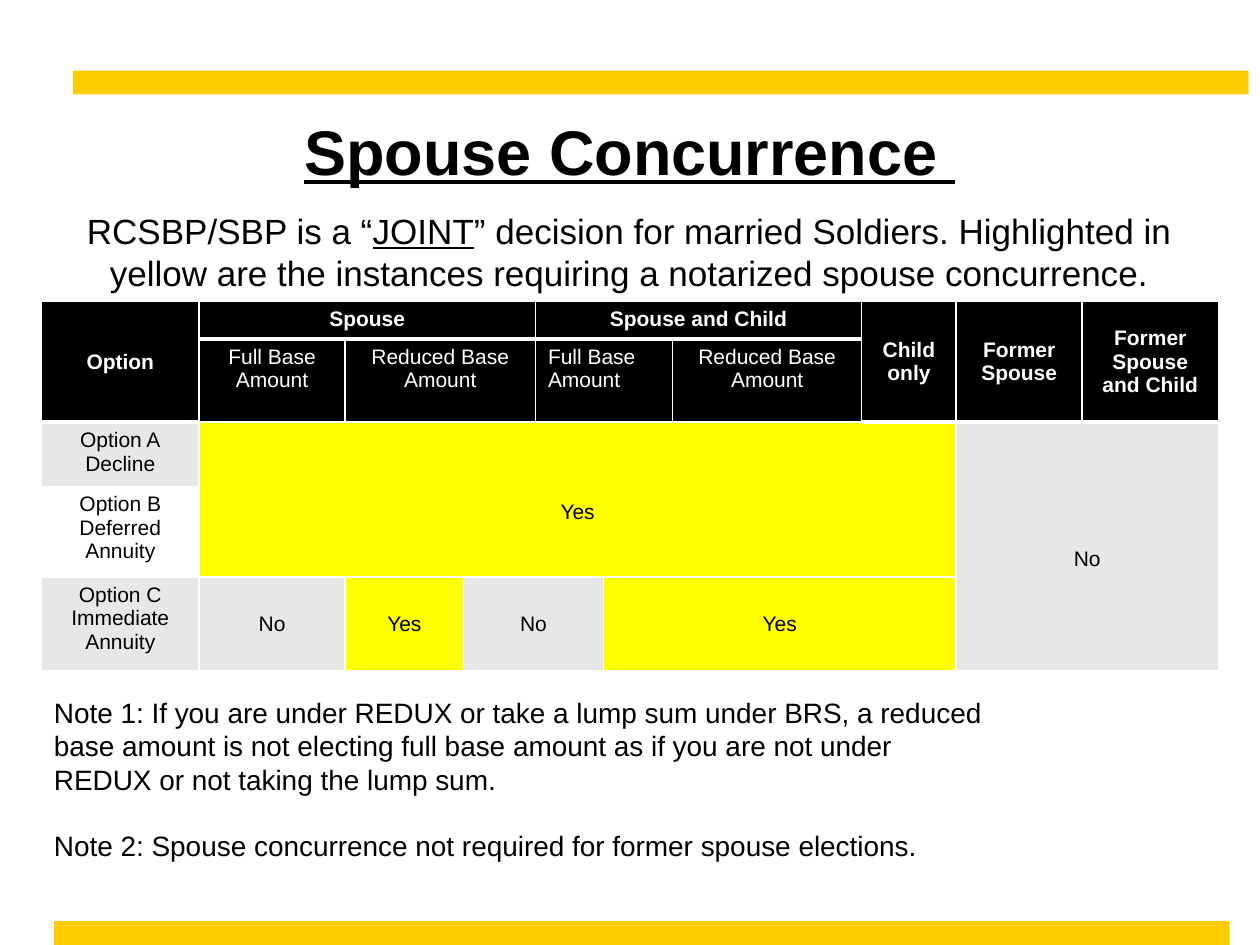
import pptx
import pptx.util
import pptx.dml.color
import pptx.enum.shapes
import pptx.enum.text
import pptx.oxml.ns
import lxml.etree

Inches = pptx.util.Inches
Pt = pptx.util.Pt
RGB = pptx.dml.color.RGBColor
ALIGN = pptx.enum.text.PP_ALIGN
ANCHOR = pptx.enum.text.MSO_ANCHOR
GOLD = RGB(0xFF, 0xCC, 0x01)
BLACK = RGB(0, 0, 0)
WHITE = RGB(0xFF, 0xFF, 0xFF)
GRAY = RGB(0xE7, 0xE7, 0xE7)
YELLOW = RGB(0xFF, 0xFF, 0)

WIDE, LEFT = 9.33, 0.33
COLS = [1.25, 1.16, 0.94, 0.57, 0.54, 0.55, 1.5, 0.75, 1, 1.08]
ROWS = [0.3, 0.66, 0.51, 0.72, 0.74]

# row, column, rows spanned, columns spanned, text
HEADS = [
    (0, 0, 2, 1, "Option"),
    (0, 1, 1, 3, "Spouse"),
    (0, 4, 1, 3, "Spouse and Child"),
    (0, 7, 2, 1, "Child only"),
    (0, 8, 2, 1, "Former Spouse"),
    (0, 9, 2, 1, "Former Spouse and Child"),
]
BASES = [
    (1, 1, 1, 1, "Full Base Amount"),
    (1, 2, 1, 2, "Reduced Base Amount"),
    (1, 4, 1, 2, "Full Base Amount"),
    (1, 6, 1, 1, "Reduced Base Amount"),
]
OPTIONS = [
    (2, 0, 1, 1, "Option A\nDecline"),
    (3, 0, 1, 1, "Option B\nDeferred Annuity"),
    (4, 0, 1, 1, "Option C\nImmediate\nAnnuity"),
]
ANSWERS = [
    (2, 1, 2, 7, "Yes"),
    (2, 8, 3, 2, "No"),
    (4, 1, 1, 1, "No"),
    (4, 2, 1, 1, "Yes"),
    (4, 3, 1, 2, "No"),
    (4, 5, 1, 3, "Yes"),
]


def write(frame, text, size=12, color=BLACK, bold=False, line=False,
          align=ALIGN.CENTER, gap=0):
    """Fill a frame; newlines part paragraphs, and _ marks underlined words."""
    frame.word_wrap = True
    for i, part in enumerate(text.split("\n")):
        para = frame.paragraphs[0] if i == 0 else frame.add_paragraph()
        para.alignment = align
        if i and gap:
            para.space_before = Pt(gap)
        for j, words in enumerate(part.split("_")):
            run = para.add_run()
            run.text = words
            font = run.font
            font.name, font.size, font.bold = "Arial", Pt(size), bold
            font.underline = line or j % 2 == 1
            font.color.rgb = color


def bar(slide, left, top):
    shape = slide.shapes.add_shape(
        pptx.enum.shapes.MSO_SHAPE.RECTANGLE,
        Inches(left), Inches(top), Inches(WIDE), Inches(0.19))
    shape.shadow.inherit = False
    shape.fill.solid()
    shape.fill.fore_color.rgb = GOLD
    shape.line.fill.background()


def note(slide, left, top, width, height, text, **style):
    box = slide.shapes.add_textbox(
        Inches(left), Inches(top), Inches(width), Inches(height))
    write(box.text_frame, text, **style)


def edge(cell, side, width):
    tag = pptx.oxml.ns.qn
    props = cell._tc.get_or_add_tcPr()
    line = lxml.etree.SubElement(props, tag("a:ln" + side), w=str(Pt(width)))
    fill = lxml.etree.SubElement(line, tag("a:solidFill"))
    lxml.etree.SubElement(fill, tag("a:srgbClr"), val=str(WHITE))


def put(table, spot, fill, anchor=ANCHOR.TOP, base=1, **style):
    """Write one cell, merged over its span, with white borders."""
    row, col, down, across, text = spot
    cell = table.cell(row, col)
    if down * across > 1:
        cell.merge(table.cell(row + down - 1, col + across - 1))
    for side in "LRTB":
        if side != "T" or row == 0:
            edge(cell, side, base if side == "B" else 1)
    if fill is None:
        cell.fill.background()
    else:
        cell.fill.solid()
        cell.fill.fore_color.rgb = fill
    cell.vertical_anchor = anchor
    write(cell.text_frame, text, **style)
    return cell


def grid(slide):
    frame = slide.shapes.add_table(
        len(ROWS), len(COLS), Inches(LEFT), Inches(2.39),
        Inches(WIDE), Inches(sum(ROWS)))
    table = frame.table
    table.first_row = table.horz_banding = False
    for col, width in zip(table.columns, COLS):
        col.width = Inches(width)
    for row, height in zip(table.rows, ROWS):
        row.height = Inches(height)

    for spot in HEADS:
        anchor = ANCHOR.MIDDLE if spot[2] > 1 else ANCHOR.TOP
        put(table, spot, BLACK, anchor, base=3, color=WHITE, bold=True)
    for spot in BASES:
        align = ALIGN.LEFT if spot[1] == 4 else ALIGN.CENTER
        put(table, spot, BLACK, color=WHITE, align=align)
    for spot in OPTIONS:
        put(table, spot, None if spot[0] == 3 else GRAY)
    for spot in ANSWERS:
        fill = YELLOW if spot[4] == "Yes" else GRAY
        cell = put(table, spot, fill, ANCHOR.MIDDLE)
        if spot[2] > 1:
            cell.margin_top = Inches(0.25)


def main():
    deck = pptx.Presentation()
    deck.slide_width, deck.slide_height = Inches(10), Inches(7.5)
    slide = deck.slides.add_slide(deck.slide_layouts[5])
    bar(slide, 0.58, 0.56)
    bar(slide, 0.43, 7.31)

    title = slide.shapes.title
    title.left, title.top = Inches(0.5), Inches(0.75)
    title.width, title.height = Inches(9), Inches(0.88)
    title.text_frame.vertical_anchor = ANCHOR.MIDDLE
    write(title.text_frame, "Spouse Concurrence ", size=36, bold=True, line=True)

    grid(slide)
    note(slide, LEFT, 1.61, WIDE, 0.77,
         "RCSBP/SBP is a “_JOINT_” decision for married Soldiers. Highlighted "
         "in yellow are the instances requiring a notarized spouse "
         "concurrence.", size=20)
    note(slide, LEFT, 5.47, 7.67, 1.45,
         "Note 1: If you are under REDUX or take a lump sum under BRS, a "
         "reduced base amount is not electing full base amount as if you are "
         "not under REDUX or not taking the lump sum.\n"
         "Note 2: Spouse concurrence not required for former spouse "
         "elections.", size=16, align=ALIGN.LEFT, gap=18.4)
    deck.save("out.pptx")


if __name__ == "__main__":
    main()
